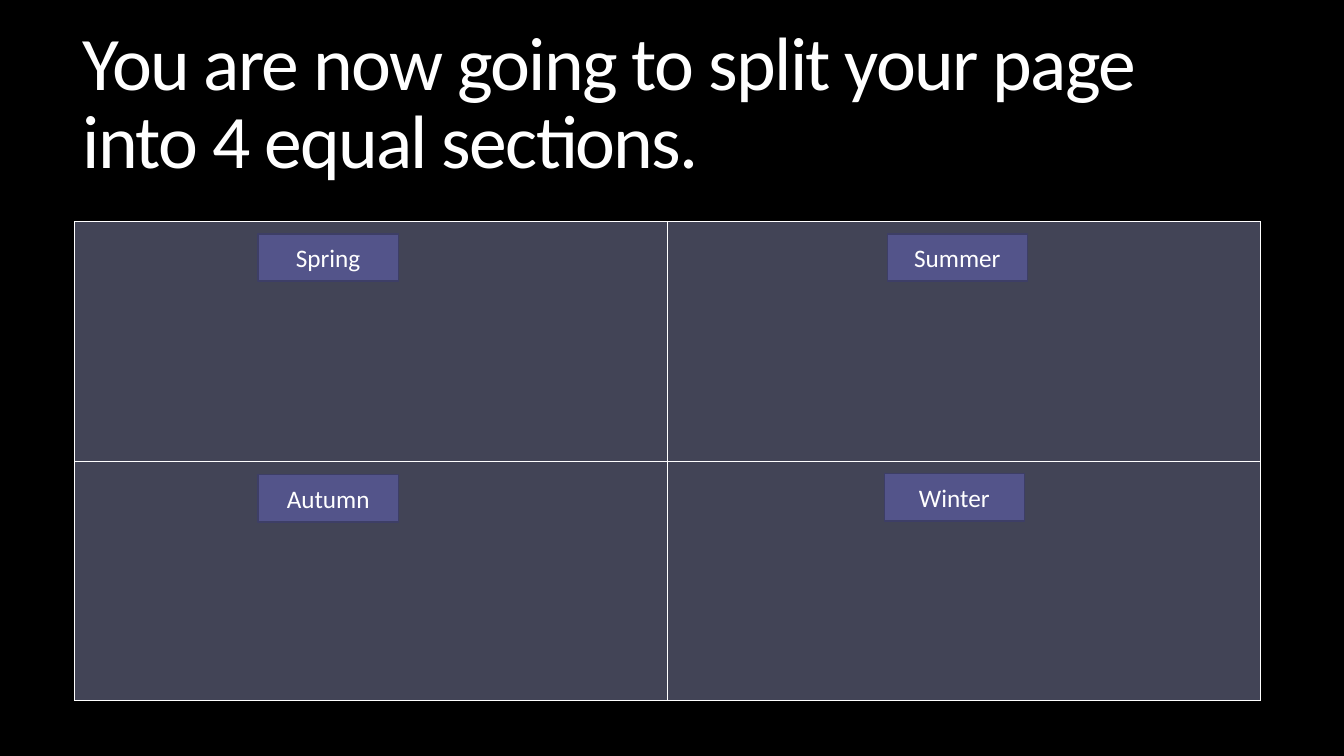
from dataclasses import dataclass

from lxml.etree import SubElement
from pptx import Presentation
from pptx.dml.color import RGBColor
from pptx.enum.shapes import MSO_SHAPE
from pptx.enum.text import MSO_ANCHOR, PP_ALIGN
from pptx.oxml.ns import qn
from pptx.slide import Slide
from pptx.table import _Cell as Cell
from pptx.text.text import _Paragraph as Paragraph
from pptx.util import Inches, Pt

BLACK = RGBColor(0x00, 0x00, 0x00)
WHITE = RGBColor(0xFF, 0xFF, 0xFF)
SECTION_FILL = RGBColor(0x42, 0x44, 0x56)
LABEL_FILL = RGBColor(0x53, 0x54, 0x8A)
LABEL_LINE = RGBColor(0x3D, 0x3E, 0x66)
FONT = "Calibri"


@dataclass(frozen=True)
class Label:
    text: str
    left: float
    top: float


LABELS = [
    Label("Spring", 2.56, 2.32),
    Label("Autumn", 2.56, 4.71),
    Label("Summer", 8.8, 2.32),
    Label("Winter", 8.77, 4.7),
]


def format_text(p: Paragraph, size: float) -> None:
    for r in p.runs:
        r.font.name = FONT
        r.font.size = Pt(size)
        r.font.color.rgb = WHITE


def add_title(s: Slide, text: str) -> None:
    tf = s.shapes.add_textbox(Inches(0.72), Inches(0.15), Inches(11.78), Inches(1.81)).text_frame
    tf.word_wrap = True
    tf.vertical_anchor = MSO_ANCHOR.MIDDLE
    p = tf.paragraphs[0]
    p.text = text
    p.line_spacing = 0.85
    format_text(p, 54)
    for r in p.runs:
        r.font._element.set("spc", "-120")


def add_borders(cell: Cell, width: float) -> None:
    tcPr = cell._tc.get_or_add_tcPr()
    for side in ("a:lnL", "a:lnR", "a:lnT", "a:lnB"):
        ln = SubElement(tcPr, qn(side), w=str(Pt(width)))
        fill = SubElement(ln, qn("a:solidFill"))
        SubElement(fill, qn("a:srgbClr"), val=str(WHITE))


def add_sections(s: Slide) -> None:
    table = s.shapes.add_table(
        2, 2, Inches(0.74), Inches(2.2), Inches(11.76), Inches(4.75)
    ).table
    table.first_row = False
    table.horz_banding = False
    for cell in table.iter_cells():
        add_borders(cell, 1)
        cell.fill.solid()
        cell.fill.fore_color.rgb = SECTION_FILL


def add_label(s: Slide, label: Label) -> None:
    sp = s.shapes.add_shape(
        MSO_SHAPE.RECTANGLE, Inches(label.left), Inches(label.top), Inches(1.39), Inches(0.47)
    )
    sp.shadow.inherit = False
    sp.fill.solid()
    sp.fill.fore_color.rgb = LABEL_FILL
    sp.line.color.rgb = LABEL_LINE
    sp.line.width = Pt(1)
    tf = sp.text_frame
    tf.vertical_anchor = MSO_ANCHOR.MIDDLE
    p = tf.paragraphs[0]
    p.text = label.text
    p.alignment = PP_ALIGN.CENTER
    format_text(p, 18)


def main() -> None:
    prs = Presentation()
    prs.slide_width = Inches(13.33)
    prs.slide_height = Inches(7.5)
    s = prs.slides.add_slide(prs.slide_layouts[6])
    s.background.fill.solid()
    s.background.fill.fore_color.rgb = BLACK
    add_title(s, "You are now going to split your page into 4 equal sections.")
    add_sections(s)
    for label in LABELS:
        add_label(s, label)
    prs.save("out.pptx")


if __name__ == "__main__":
    main()
